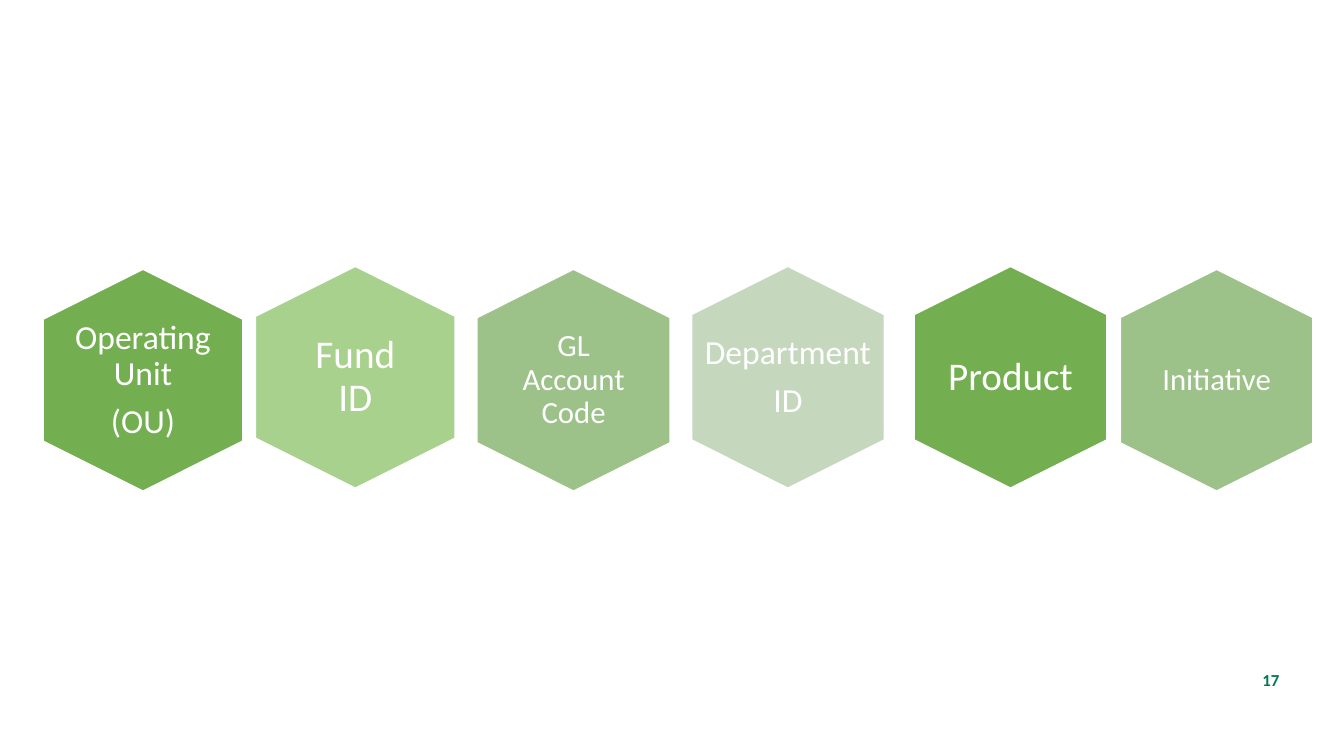
from pptx import Presentation
from pptx.dml.color import RGBColor
from pptx.enum.shapes import MSO_SHAPE as Shape
from pptx.enum.text import MSO_ANCHOR as Anchor, PP_ALIGN as Align
from pptx.util import Pt

FONT = "Calibri"
WHITE = "FFFFFF"
LEAF, LIME, SAGE, MIST = "73AE51", "A9D18E", "9CC189", "C5D8BD"
HEXAGON_HEIGHT = 158.4
UPPER, LOWER = 269.5, 271.6  # the two centre heights of the row

# Paragraphs, text size, fill, centre x, centre y, hexagon width, label width, inset
SEGMENTS = [
    (["Operating Unit", "(OU)"], 24, LEAF, 102.1, LOWER, 142.6, 130.3, 0),
    (["Fund ID"], 28, LIME, 253.8, UPPER, 142.6, 97.9, 6.6),
    (["GL Account Code"], 22, SAGE, 409.7, LOWER, 138, 95, 6.6),
    (["Department", "ID"], 24, MIST, 562.8, UPPER, 137.6, 137.5, 0),
    (["Product"], 28, LEAF, 721.8, UPPER, 137.6, 95, 0),
    (["Initiative"], 22, SAGE, 869, LOWER, 137.6, 95, 6.6),
]


def color(value):
    return RGBColor.from_string(value)


def centered_frame(center_x, center_y, width, height):
    return (Pt(center_x - width / 2), Pt(center_y - height / 2),
            Pt(width), Pt(height))


def add_hexagon(slide, center_x, center_y, width, fill):
    # Turned a quarter so that its points face up and down
    hexagon = slide.shapes.add_shape(
        Shape.HEXAGON,
        *centered_frame(center_x, center_y, HEXAGON_HEIGHT, width))
    hexagon.rotation = 90
    hexagon.shadow.inherit = False
    hexagon.fill.solid()
    hexagon.fill.fore_color.rgb = color(fill)
    hexagon.line.color.rgb = color(WHITE)
    hexagon.line.width = Pt(1)


def add_text(slide, frame, paragraphs, size, ink, align, inset, bold=False):
    text = slide.shapes.add_textbox(*frame).text_frame
    text.word_wrap = True
    text.vertical_anchor = Anchor.MIDDLE
    text.margin_left = text.margin_right = Pt(inset)
    text.margin_top = text.margin_bottom = Pt(inset)
    for index, wording in enumerate(paragraphs):
        paragraph = text.add_paragraph() if index else text.paragraphs[0]
        paragraph.alignment = align
        paragraph.line_spacing = 0.9
        paragraph.space_after = Pt(0.35 * size)
        run = paragraph.add_run()
        run.text = wording
        run.font.name = FONT
        run.font.size = Pt(size)
        run.font.bold = bold
        run.font.color.rgb = color(ink)


def main():
    deck = Presentation()
    deck.slide_width, deck.slide_height = Pt(960), Pt(540)
    slide = deck.slides.add_slide(deck.slide_layouts[6])

    # Row of account segments
    for words, size, fill, x, y, width, label_width, inset in SEGMENTS:
        add_hexagon(slide, x, y, width, fill)
        label_frame = centered_frame(x, y, label_width, 109)
        add_text(slide, label_frame, words, size, WHITE, Align.CENTER, inset)

    # Page number
    number_frame = centered_frame(887.4, 486.4, 67, 21)
    add_text(slide, number_frame, ["17"], 12, "007851", Align.RIGHT, 7,
             bold=True)

    deck.save("out.pptx")


if __name__ == "__main__":
    main()
